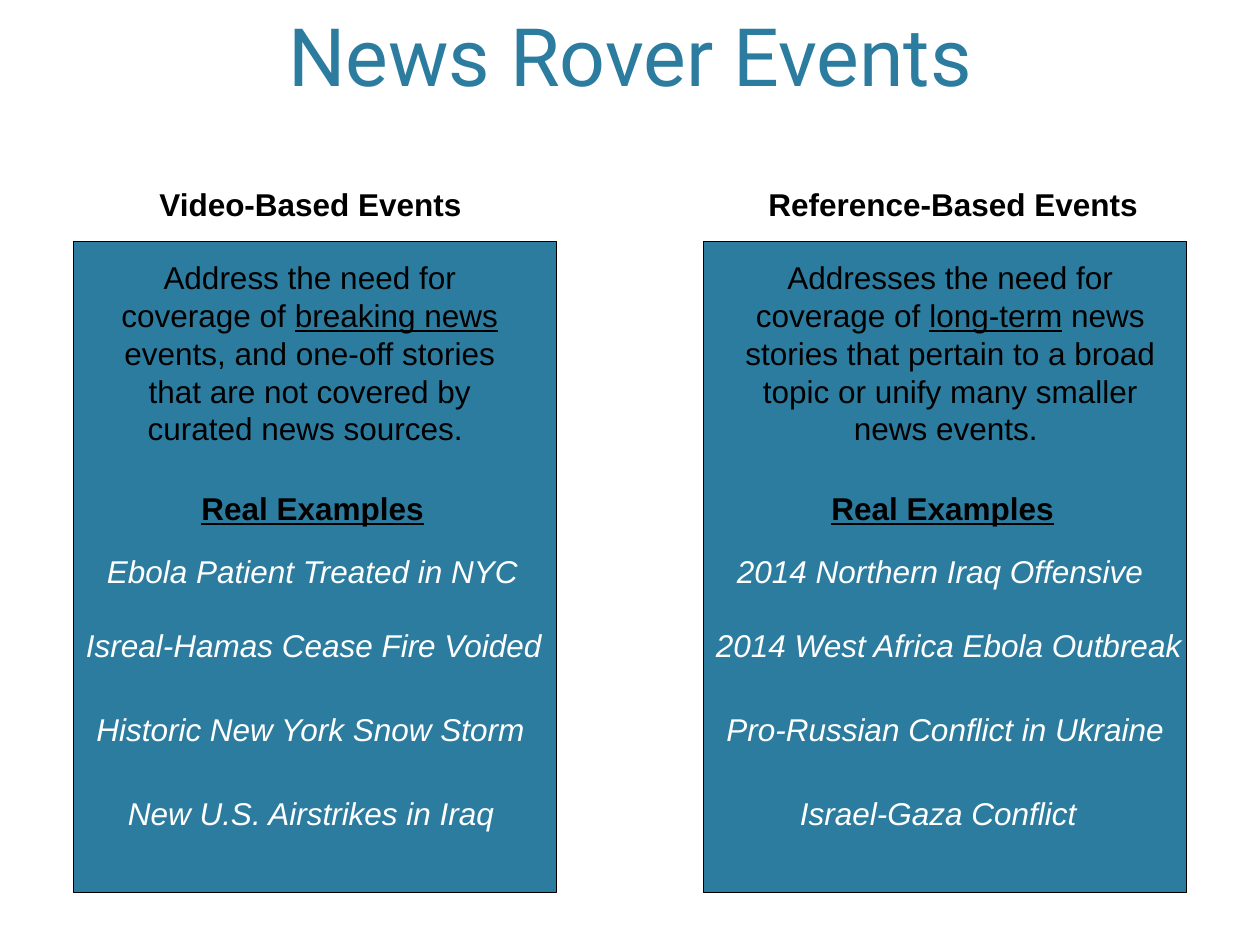
from pptx import Presentation
from pptx import util as u
from pptx.dml.color import RGBColor
from pptx.enum import shapes, text

COLORS = {"teal": "2C7C9F", "black": "000000", "white": "FFFFFF"}
PANEL_TOP, PANEL_W, PANEL_H = 138, 276, 372
HEADING_TOP, SUMMARY_TOP, EXAMPLES_TOP = 102, 144, 276
ITEM_TOPS = (312, 354, 402, 450)
LINE_H = 29

# Each label is (text, left, width); each summary run is (text, underlined)
COLUMNS = [
    {
        "panel_left": 42,
        "heading": ("Video-Based Events", 84, 190),
        "summary_left": 48,
        "summary": [
            ("Address the need for coverage of ", False),
            ("breaking news ", True),
            ("events, and one-off stories that are not covered by "
             "curated news sources. ", False),
        ],
        "examples_left": 108,
        "items": [
            ("Ebola Patient Treated in NYC", 54, 256),
            ("Isreal-Hamas Cease Fire Voided", 42, 279),
            ("Historic New York Snow Storm", 48, 266),
            ("New U.S. Airstrikes in Iraq", 66, 230),
        ],
    },
    {
        "panel_left": 402,
        "heading": ("Reference-Based Events", 432, 228),
        "summary_left": 414,
        "summary": [
            ("Addresses the need for coverage of ", False),
            ("long-term", True),
            (" news stories that pertain to a broad topic or unify many "
             "smaller news events. ", False),
        ],
        "examples_left": 468,
        "items": [
            ("2014 Northern Iraq Offensive", 414, 253),
            ("2014 West Africa Ebola Outbreak", 402, 287),
            ("Pro-Russian Conflict in Ukraine", 408, 271),
            ("Israel-Gaza Conflict", 450, 179),
        ],
    },
]


def rgb(name):
    return RGBColor.from_string(COLORS[name])


def add_run(p, words, color="black", size=18, font="Arial", **style):
    r = p.add_run()
    r.text = words
    r.font.name, r.font.size = font, u.Pt(size)
    r.font.color.rgb = rgb(color)
    for key, value in style.items():
        setattr(r.font, key, value)


def add_title(s, words):
    sp = s.shapes.title
    sp.left, sp.top, sp.width, sp.height = map(u.Pt, (36, 0, 648, 90))
    tf = sp.text_frame
    tf.vertical_anchor = text.MSO_ANCHOR.TOP
    p = tf.paragraphs[0]
    p.alignment = text.PP_ALIGN.CENTER
    add_run(p, words, "teal", 46, "Roboto")


def add_panel(s, left):
    sp = s.shapes.add_shape(shapes.MSO_SHAPE.RECTANGLE, u.Pt(left),
                            u.Pt(PANEL_TOP), u.Pt(PANEL_W), u.Pt(PANEL_H))
    sp.shadow.inherit = False
    sp.fill.solid()
    sp.fill.fore_color.rgb = rgb("teal")
    sp.line.color.rgb = rgb("black")
    sp.line.width = u.Pt(1)


def add_box(s, left, top, width, height, wrap=False):
    sp = s.shapes.add_textbox(*map(u.Pt, (left, top, width, height)))
    tf = sp.text_frame
    tf.word_wrap = wrap
    tf.auto_size = text.MSO_AUTO_SIZE.SHAPE_TO_FIT_TEXT
    return tf.paragraphs[0]


def add_label(s, label, top, color="black", **style):
    words, left, width = label
    add_run(add_box(s, left, top, width, LINE_H), words, color, **style)


def add_summary(s, left, runs):
    p = add_box(s, left, SUMMARY_TOP, 258, 117, wrap=True)
    p.alignment = text.PP_ALIGN.CENTER
    for words, underlined in runs:
        add_run(p, words, underline=underlined)


def add_column(s, column):
    add_panel(s, column["panel_left"])
    add_label(s, column["heading"], HEADING_TOP, bold=True)
    add_summary(s, column["summary_left"], column["summary"])
    # Examples
    add_label(s, ("Real Examples", column["examples_left"], 143),
              EXAMPLES_TOP, bold=True, underline=True)
    for item, top in zip(column["items"], ITEM_TOPS):
        add_label(s, item, top, "white", italic=True)


def main():
    prs = Presentation()
    prs.slide_width, prs.slide_height = u.Pt(720), u.Pt(540)
    s = prs.slides.add_slide(prs.slide_layouts[5])
    add_title(s, "News Rover Events")
    for column in COLUMNS:
        add_column(s, column)
    prs.save("out.pptx")


if __name__ == "__main__":
    main()
